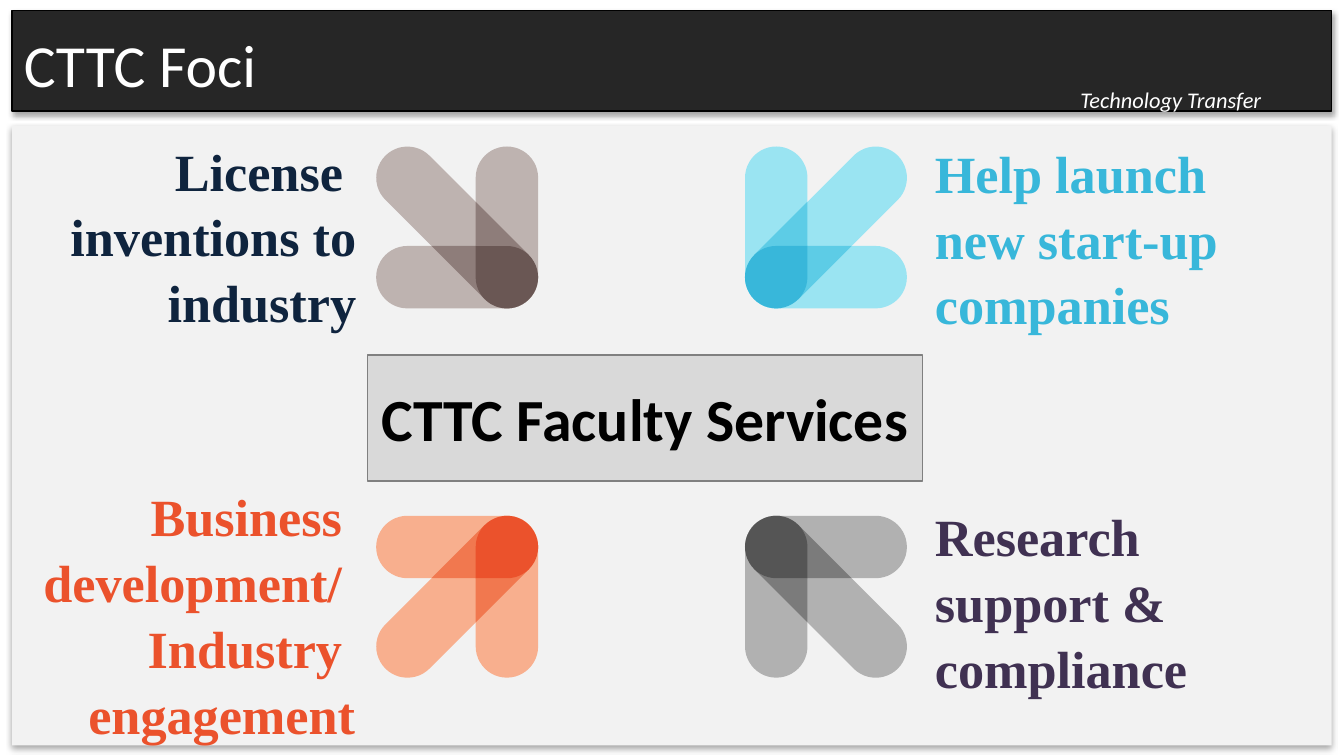
from lxml import etree
from pptx import Presentation
from pptx.dml.color import RGBColor
from pptx.enum.shapes import MSO_SHAPE
from pptx.enum.text import MSO_ANCHOR, MSO_AUTO_SIZE, PP_ALIGN
from pptx.oxml.ns import qn
from pptx.util import Cm, Pt

RECTANGLE = MSO_SHAPE.RECTANGLE
CAPSULE = MSO_SHAPE.ROUNDED_RECTANGLE
TEARDROP = MSO_SHAPE.TEAR
LEFT, RIGHT = PP_ALIGN.LEFT, PP_ALIGN.RIGHT
TOP, MIDDLE = MSO_ANCHOR.TOP, MSO_ANCHOR.MIDDLE
GROW, FIXED = MSO_AUTO_SIZE.SHAPE_TO_FIT_TEXT, MSO_AUTO_SIZE.NONE

COLOURS = {
    "panel": "F2F2F2", "header": "262626", "white": "FFFFFF", "black": "000000",
    "title fill": "D9D9D9", "title line": "808080",
    "navy": "0F243E", "blue": "38B7DA", "orange": "EB522C", "purple": "403152",
}
# light bars, overlap of the bars, tip
ARROW_TINTS = {
    "brown": ("BEB3B0", "8E7D7A", "6A5754"),
    "blue": ("9AE4F2", "5DCCE6", "38B7DA"),
    "orange": ("F8AF8E", "F1784F", "EB522C"),
    "grey": ("B1B1B1", "7B7B7B", "555555"),
}
# turn of the tip for each tail direction; its square corner faces the tail
TIP_TURNS = {(1, -1): 0, (1, 1): 90, (-1, 1): 180, (-1, -1): 270}
BAR_RADIUS = 0.59
BAR_REACH = 1.88


class SlideBuilder:
    heading_font = "Calibri"
    label_font = "Times New Roman"

    def __init__(self, slide):
        self.slide = slide
        self.shapes = slide.shapes

    def paint(self, shape, fill, line=None):
        shape.fill.solid()
        shape.fill.fore_color.rgb = RGBColor.from_string(fill)
        if line:
            shape.line.color.rgb = RGBColor.from_string(line)
            shape.line.width = Pt(0.75)
        else:
            shape.line.fill.background()
        shape.shadow.inherit = False

    def preset(self, kind, centre, size, fill, turn=0):
        (x, y), (width, height) = centre, size
        shape = self.shapes.add_shape(
            kind, Cm(x - width / 2), Cm(y - height / 2), Cm(width), Cm(height))
        shape.rotation = turn
        self.paint(shape, fill)
        return shape

    def panel(self, left, top, width, height, fill, line=None):
        """Add a rectangle with a soft shadow below it."""
        shape = self.shapes.add_shape(
            RECTANGLE, Cm(left), Cm(top), Cm(width), Cm(height))
        self.paint(shape, fill, line)
        effects = shape.element.spPr.find(qn("a:effectLst"))
        shadow = etree.SubElement(
            effects, qn("a:outerShdw"), blurRad=str(Pt(3.1)), dist=str(Pt(1.8)),
            dir="5400000", rotWithShape="0")
        colour = etree.SubElement(shadow, qn("a:srgbClr"), val=COLOURS["black"])
        etree.SubElement(colour, qn("a:alpha"), val="35000")

    def fill_text(self, frame, lines, size, colour, font, align=LEFT, anchor=TOP,
                  fit=GROW, bold=False, italic=False, spacing=None):
        frame.word_wrap = True
        frame.auto_size = fit
        frame.vertical_anchor = anchor
        for index, line in enumerate(lines):
            paragraph = frame.add_paragraph() if index else frame.paragraphs[0]
            paragraph.alignment = align
            if spacing:
                paragraph.line_spacing = spacing
            run = paragraph.add_run()
            run.text = line
            run.font.name = font
            run.font.size = Pt(size)
            run.font.bold = bold
            run.font.italic = italic
            run.font.color.rgb = RGBColor.from_string(COLOURS[colour])

    def text(self, left, top, width, height, lines, size, colour, font, **style):
        box = self.shapes.add_textbox(Cm(left), Cm(top), Cm(width), Cm(height))
        self.fill_text(box.text_frame, lines, size, colour, font, **style)

    def service(self, left, top, width, height, lines, colour, align):
        self.text(left, top, width, height, lines, 28, colour, self.label_font,
                  align=align, bold=True, spacing=1.05)

    def title(self, left, top, width, height, text):
        title = self.shapes.title
        title.left, title.top = Cm(left), Cm(top)
        title.width, title.height = Cm(width), Cm(height)
        self.paint(title, COLOURS["title fill"], COLOURS["title line"])
        self.fill_text(title.text_frame, [text], 32, "black", self.heading_font,
                       anchor=MIDDLE, fit=FIXED, bold=True)
        title.element.getparent().append(title.element)  # bring to front

    def arrow(self, tip, tail, tints):
        """Three capsules that meet at the tip and run towards the tail."""
        (x, y), (across, down) = tip, tail
        light, overlap, dark = tints
        thickness = 2 * BAR_RADIUS
        length = BAR_REACH + thickness
        diagonal = BAR_REACH * 2 ** 0.5 + thickness
        shift_x, shift_y = across * BAR_REACH / 2, down * BAR_REACH / 2
        bars = [
            ((x + shift_x, y), length, 0),
            ((x, y + shift_y), length, 90),
            ((x + shift_x, y + shift_y), diagonal, 45 * across * down),
        ]
        for centre, bar_length, turn in bars:
            bar = self.preset(CAPSULE, centre, (bar_length, thickness), light, turn)
            bar.adjustments[0] = 0.5

        near = BAR_RADIUS / 2 ** 0.5
        far = BAR_RADIUS * (1 + 2 ** 0.5)
        corners = [(near, -near), (far, BAR_RADIUS), (BAR_RADIUS, BAR_RADIUS),
                   (BAR_RADIUS, far), (-near, near)]
        points = [(Cm(x + across * u), Cm(y + down * v)) for u, v in corners]
        builder = self.shapes.build_freeform(*points[0])
        builder.add_line_segments(points[1:], close=True)
        self.paint(builder.convert_to_shape(), overlap)

        self.preset(TEARDROP, tip, (thickness, thickness), dark, TIP_TURNS[tail])


def main():
    presentation = Presentation()
    presentation.slide_width, presentation.slide_height = Cm(25.4), Cm(14.29)
    builder = SlideBuilder(presentation.slides.add_slide(presentation.slide_layouts[5]))
    heading_font = builder.heading_font

    builder.panel(0.23, 2.38, 24.94, 11.71, COLOURS["panel"])
    builder.panel(0.23, 0.2, 24.94, 1.9, COLOURS["header"], COLOURS["black"])
    builder.text(20.17, 1.5, 4.22, 0.78, ["Technology Transfer"], 12, "white",
                 heading_font, italic=True)

    builder.service(0.3, 2.44, 6.68, 3.84,
                    ["License ", "inventions to industry"], "navy", RIGHT)
    builder.service(17.42, 2.48, 7.98, 3.84,
                    ["Help launch", "new start-up companies"], "blue", LEFT)
    builder.service(0.13, 8.97, 6.83, 5.05,
                    ["Business ", "development/ ", "Industry ", "engagement"],
                    "orange", RIGHT)
    builder.service(17.42, 9.35, 5.54, 3.84,
                    ["Research", "support & compliance"], "purple", LEFT)

    left, right, upper, lower = 9.58, 14.67, 5.24, 10.34
    builder.arrow((right, upper), (1, -1), ARROW_TINTS["blue"])
    builder.arrow((right, lower), (1, 1), ARROW_TINTS["grey"])
    builder.arrow((left, lower), (-1, 1), ARROW_TINTS["orange"])
    builder.arrow((left, upper), (-1, -1), ARROW_TINTS["brown"])

    builder.title(6.95, 6.71, 10.49, 2.38, "CTTC Faculty Services")
    builder.text(0.2, 0, 16.03, 2.39, ["CTTC Foci"], 32, "white", heading_font,
                 anchor=MIDDLE, fit=FIXED)
    presentation.save("out.pptx")


if __name__ == "__main__":
    main()
